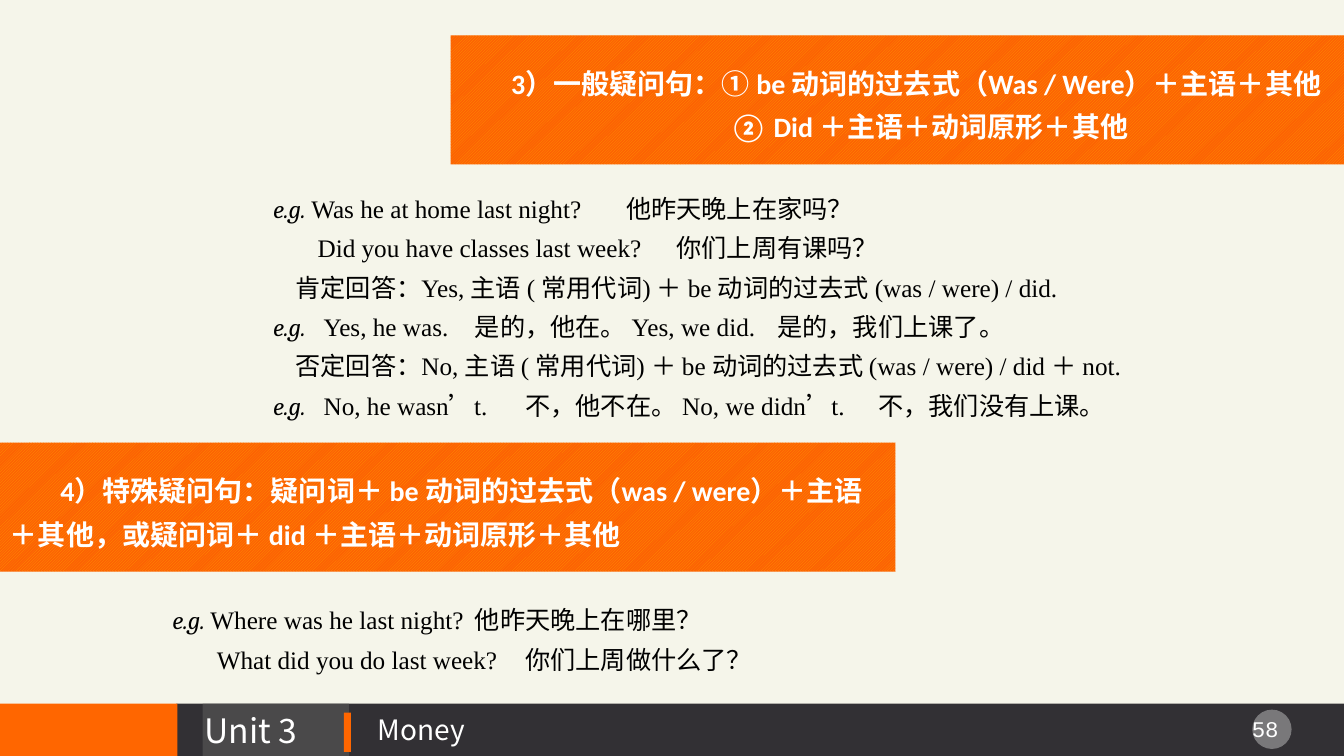
"""Build the grammar slide on past-tense questions."""
from lxml import etree
from pptx import Presentation
from pptx.dml.color import RGBColor
from pptx.enum.dml import MSO_PATTERN
from pptx.enum.lang import MSO_LANGUAGE_ID
from pptx.enum.shapes import MSO_SHAPE
from pptx.enum.text import MSO_ANCHOR, MSO_AUTO_SIZE, PP_ALIGN
from pptx.oxml.ns import qn
from pptx.util import Inches, Pt

RECTANGLE, OVAL = MSO_SHAPE.RECTANGLE, MSO_SHAPE.OVAL
DIAGONAL = MSO_PATTERN.LIGHT_UPWARD_DIAGONAL
CHINESE = MSO_LANGUAGE_ID.SIMPLIFIED_CHINESE
TOP, MIDDLE = MSO_ANCHOR.TOP, MSO_ANCHOR.MIDDLE
LEFT, CENTER = PP_ALIGN.LEFT, PP_ALIGN.CENTER
NO_FIT = MSO_AUTO_SIZE.NONE

CREAM = RGBColor(0xF5, 0xF5, 0xEA)
CHARCOAL = RGBColor(0x32, 0x30, 0x34)
GRAY = RGBColor(0x59, 0x59, 0x59)
ORANGE = RGBColor(0xFF, 0x66, 0x00)
STRIPE = RGBColor(0xFF, 0x96, 0x00)
BANNER = RGBColor(0xFC, 0x62, 0x04)
WHITE = RGBColor(0xFF, 0xFF, 0xFF)
BLACK = RGBColor(0x00, 0x00, 0x00)
CJK_FONT = "Noto Sans CJK SC"
EXAMPLE = "e.g."

# Each line: text, first-line indent, tab stops (inches)
GENERAL_RULE = [
    ("3）一般疑问句：① be 动词的过去式（Was / Were）＋主语＋其他", 0.5, ()),
    ("② Did ＋主语＋动词原形＋其他", 2.67, ()),
]
SPECIAL_RULE = [
    ("4）特殊疑问句：疑问词＋ be 动词的过去式（was / were）＋主语＋其他，"
     "或疑问词＋ did ＋主语＋动词原形＋其他", 0.5, ()),
]
GENERAL_EXAMPLES = [
    ("e.g. Was he at home last night?\t他昨天晚上在家吗？", 0.5, (3.86,)),
    ("Did you have classes last week?\t你们上周有课吗？", 0.94, (4.46,)),
    ("肯定回答：Yes, 主语 ( 常用代词) ＋ be 动词的过去式 (was / were) / did.", 0.72, ()),
    ("e.g.\tYes, he was.\t是的，他在。 Yes, we did.\t是的，我们上课了。",
     0.5, (0.94, 2.35, 5.44)),
    ("否定回答：No, 主语 ( 常用代词) ＋ be 动词的过去式 (was / were) / did ＋ not.",
     0.72, ()),
    ("e.g.\tNo, he wasn’t.\t不，他不在。 No, we didn’t.\t不，我们没有上课。",
     0.5, (0.99, 2.99, 6.58)),
]
SPECIAL_EXAMPLES = [
    ("e.g. Where was he last night?\t他昨天晚上在哪里？", 0.5, (3.63,)),
    ("What did you do last week?\t你们上周做什么了？", 0.94, (3.96,)),
]
# Each bar part: preset, place, colour, opacity in percent
FOOTER_SHAPES = [
    (RECTANGLE, (1.75, 6.98, 11.59, 0.52), CHARCOAL, 100),
    (RECTANGLE, (0, 6.98, 1.76, 0.52), ORANGE, 100),
    (OVAL, (12.42, 7.04, 0.39, 0.39), WHITE, 35),
    (RECTANGLE, (2.01, 6.98, 1.45, 0.52), GRAY, 62),
    (RECTANGLE, (3.41, 7.07, 0.07, 0.39), ORANGE, 100),
]
# Each label: place, line, size, font, alignment, anchor
FOOTER_LABELS = [
    ((12.26, 7.05, 0.71, 0.37), ("58 ", 0, ()), 16, "Courier New", CENTER, TOP),
    ((1.93, 6.99, 1.72, 0.5), ("Unit 3", 0, ()), 24, "Noto Sans CJK JP", LEFT, MIDDLE),
    ((3.58, 7.02, 3.36, 0.44), ("Money", 0.07, ()), 20, CJK_FONT, LEFT, TOP),
]


def place(box, at):
    box.left, box.top, box.width, box.height = map(Inches, at)


def split_scripts(text):
    """Split text into Chinese and Latin spans; spaces stay with the span before."""
    spans = []
    for letter in text:
        chinese = ord(letter) >= 0x2E80
        if spans and (letter.isspace() or spans[-1][1] == chinese):
            spans[-1][0] += letter
        else:
            spans.append([letter, chinese])
    return spans


def add_span(para, text, font, size, color, bold=False, italic=False):
    span = para.add_run()
    span.text = text
    span.font.name, span.font.size = font, Pt(size)
    span.font.bold, span.font.italic = bold, italic
    span.font.color.rgb = color
    span.font.language_id = CHINESE
    east_asian = etree.Element(qn("a:ea"), typeface=CJK_FONT)
    span.font._element.find(qn("a:latin")).addnext(east_asian)


def write(box, lines, size=18, color=BLACK, font=None, bold=False,
          align=LEFT, anchor=TOP, spacing=1.3):
    """Fill a box; without a font, Chinese and Latin spans get their own."""
    frame = box.text_frame
    frame.word_wrap, frame.auto_size = True, NO_FIT
    frame.vertical_anchor = anchor
    for number, (text, indent, stops) in enumerate(lines):
        para = frame.add_paragraph() if number else frame.paragraphs[0]
        properties = para._p.get_or_add_pPr()
        properties.set("marL", "0")
        properties.set("indent", str(Inches(indent)))
        etree.SubElement(properties, qn("a:buNone"))
        if stops:
            tabs = etree.SubElement(properties, qn("a:tabLst"))
            for stop in stops:
                etree.SubElement(tabs, qn("a:tab"), pos=str(Inches(stop)), algn="l")
        para.alignment, para.line_spacing = align, spacing
        para.space_before = Pt(0)
        if font:
            add_span(para, text, font, size, color, bold)
            continue
        if text.startswith(EXAMPLE):
            cut = len(EXAMPLE) + 1
            add_span(para, text[:cut], "Cambria", size, color, italic=True)
            text = text[cut:]
        for part, chinese in split_scripts(text):
            add_span(para, part, CJK_FONT if chinese else "Times New Roman", size, color)


def write_banner(box, lines):
    box.fill.patterned()
    box.fill.pattern = DIAGONAL
    box.fill.fore_color.rgb, box.fill.back_color.rgb = STRIPE, BANNER
    box.line.fill.background()
    write(box, lines, size=20, color=WHITE, font="Calibri", bold=True, anchor=MIDDLE)


def add_block(page, preset, at, color, opacity=100):
    block = page.shapes.add_shape(preset, *map(Inches, at))
    block.shadow.inherit = False
    block.fill.solid()
    block.fill.fore_color.rgb = color
    block.line.fill.background()
    if opacity < 100:
        tint = block._element.spPr.find(qn("a:solidFill"))[0]
        etree.SubElement(tint, qn("a:alpha"), val=str(opacity * 1000))
    return block


def main():
    deck = Presentation()
    deck.slide_width, deck.slide_height = Inches(13.33), Inches(7.5)
    page = deck.slides.add_slide(deck.slide_layouts.get_by_name("Two Content"))
    page.background.fill.solid()
    page.background.fill.fore_color.rgb = CREAM
    for holder in list(page.placeholders):
        if holder.placeholder_format.idx > 2:
            holder._element.getparent().remove(holder._element)

    title, general, special = (page.placeholders[index] for index in range(3))
    place(title, (4.47, 0.35, 8.87, 1.28))
    write_banner(title, GENERAL_RULE)
    place(general, (2.11, 1.78, 11.31, 2.46))
    write(general, GENERAL_EXAMPLES)
    write_banner(add_block(page, RECTANGLE, (0, 4.39, 8.88, 1.28), BANNER), SPECIAL_RULE)
    place(special, (1.11, 5.86, 7.66, 0.89))
    write(special, SPECIAL_EXAMPLES)

    for part in FOOTER_SHAPES:
        add_block(page, *part)
    for at, line, size, font, align, anchor in FOOTER_LABELS:
        label = page.shapes.add_textbox(*map(Inches, at))
        write(label, [line], size=size, color=WHITE, font=font,
              align=align, anchor=anchor, spacing=1.0)
    deck.save("out.pptx")


if __name__ == "__main__":
    main()
